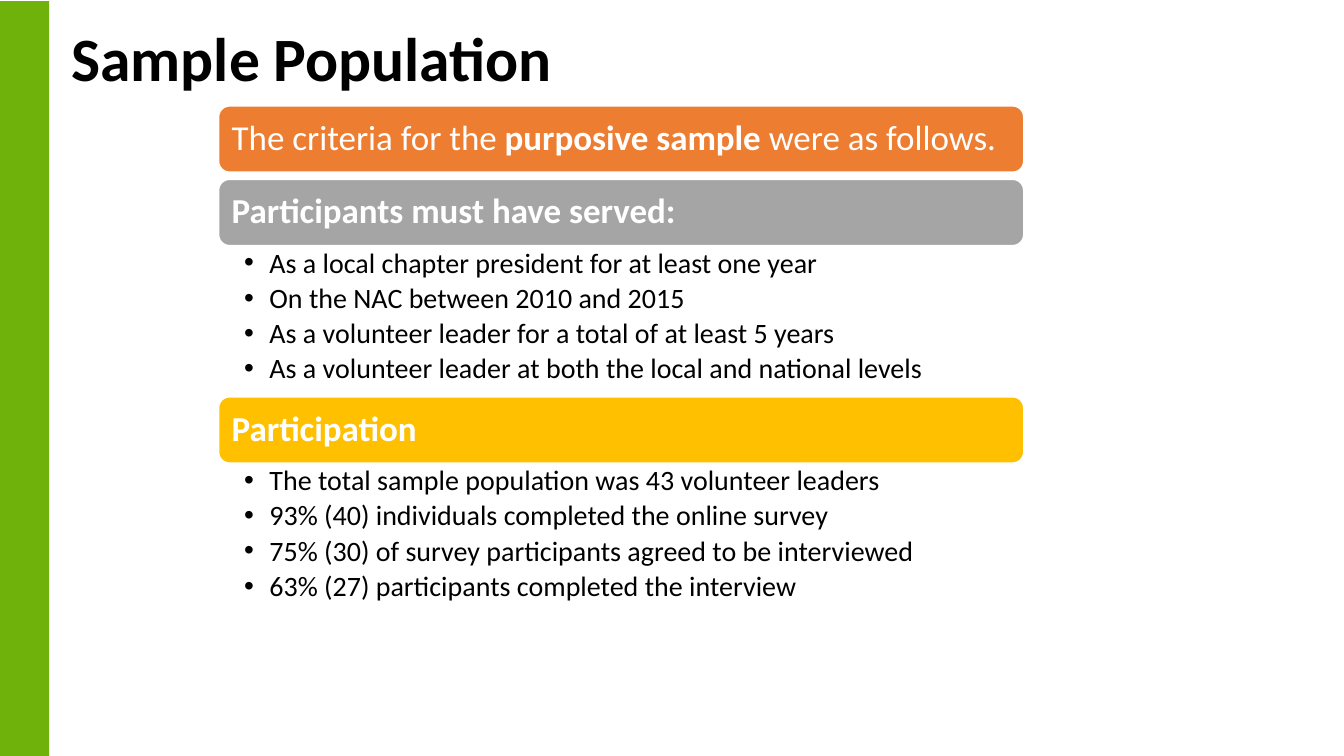
from dataclasses import dataclass

import lxml.etree
import pptx
import pptx.dml.color
import pptx.enum.shapes
import pptx.enum.text
import pptx.oxml.ns
import pptx.presentation
import pptx.shapes.autoshape
import pptx.shapes.base
import pptx.slide
import pptx.text.text
import pptx.util

COLOURS = {
    "bar": "6FB20C",
    "criteria": "ED7D31",
    "service": "A5A5A5",
    "participation": "FFC000",
    "light": "FFFFFF",
    "dark": "000000",
}
FONT_NAME = "Calibri"
STACK_LEFT, STACK_TOP, STACK_WIDTH = 5.51, 2.67, 20.29
BANNER_HEIGHT, BANNER_GAP, LIST_HEIGHT = 1.67, 0.18, 3.81
TWO_CONTENT_LAYOUT = 3


@dataclass(frozen=True)
class TextPart:
    text: str
    bold: bool = False


@dataclass(frozen=True)
class Section:
    colour: str
    heading: tuple[TextPart, ...]
    items: tuple[str, ...] = ()


SECTIONS = (
    Section("criteria", (
        TextPart("The criteria for the "),
        TextPart("purposive sample ", True),
        TextPart("were as follows."),
    )),
    Section("service", (TextPart("Participants must have served:", True),), (
        "As a local chapter president for at least one year",
        "On the NAC between 2010 and 2015",
        "As a volunteer leader for a total of at least 5 years",
        "As a volunteer leader at both the local and national levels",
    )),
    Section("participation", (TextPart("Participation", True),), (
        "The total sample population was 43 volunteer leaders",
        "93% (40) individuals completed the online survey",
        "75% (30) of survey participants agreed to be interviewed",
        "63% (27) participants completed the interview",
    )),
)


def set_attributes(target: object, values: dict[str, object]) -> None:
    for name, value in values.items():
        setattr(target, name, value)


def rgb(colour: str) -> pptx.dml.color.RGBColor:
    return pptx.dml.color.RGBColor.from_string(COLOURS[colour])


def place(shape: pptx.shapes.base.BaseShape, left: float, top: float,
          width: float, height: float) -> None:
    bounds = {"left": left, "top": top, "width": width, "height": height}
    set_attributes(shape, {name: pptx.util.Cm(value) for name, value in bounds.items()})


def format_frame(frame: pptx.text.text.TextFrame, left: float, right: float,
                 vertical: float, anchor: pptx.enum.text.MSO_ANCHOR) -> None:
    set_attributes(frame, {
        "margin_left": pptx.util.Cm(left), "margin_right": pptx.util.Cm(right),
        "margin_top": pptx.util.Cm(vertical), "margin_bottom": pptx.util.Cm(vertical),
        "vertical_anchor": anchor, "word_wrap": True,
        "auto_size": pptx.enum.text.MSO_AUTO_SIZE.NONE,
    })


def write_paragraph(paragraph: pptx.text.text._Paragraph, parts: tuple[TextPart, ...],
                    size: int, colour: str, space_after: float = 0) -> None:
    set_attributes(paragraph, {
        "alignment": pptx.enum.text.PP_ALIGN.LEFT, "line_spacing": 0.9,
        "space_before": pptx.util.Pt(0), "space_after": pptx.util.Pt(space_after),
    })
    for part in parts:
        run = paragraph.add_run()
        run.text = part.text
        set_attributes(run.font, {"name": FONT_NAME, "size": pptx.util.Pt(size),
                                  "bold": part.bold})
        run.font.color.rgb = rgb(colour)


def add_filled_shape(slide: pptx.slide.Slide, kind: pptx.enum.shapes.MSO_SHAPE,
                     colour: str, bounds: tuple[float, float, float, float],
                     ) -> pptx.shapes.autoshape.Shape:
    shape = slide.shapes.add_shape(kind, *map(pptx.util.Cm, bounds))
    shape.shadow.inherit = False
    shape.fill.solid()
    shape.fill.fore_color.rgb = rgb(colour)
    return shape


def add_banner(slide: pptx.slide.Slide, section: Section, top: float) -> None:
    banner = add_filled_shape(slide, pptx.enum.shapes.MSO_SHAPE.ROUNDED_RECTANGLE,
                              section.colour, (STACK_LEFT, top, STACK_WIDTH, BANNER_HEIGHT))
    banner.line.color.rgb = rgb("light")
    banner.line.width = pptx.util.Pt(1)
    format_frame(banner.text_frame, 0.25, 0.25, 0.25, pptx.enum.text.MSO_ANCHOR.MIDDLE)
    write_paragraph(banner.text_frame.paragraphs[0], section.heading, 25, "light")


def fill_list(body: pptx.shapes.autoshape.Shape, items: tuple[str, ...], top: float) -> None:
    place(body, STACK_LEFT, top, STACK_WIDTH, LIST_HEIGHT)
    frame = body.text_frame
    format_frame(frame, 0.64, 0.48, 0.08, pptx.enum.text.MSO_ANCHOR.TOP)
    indent = pptx.util.Cm(0.64)
    for index, item in enumerate(items):
        paragraph = frame.add_paragraph() if index else frame.paragraphs[0]
        paragraph.level = 1
        properties = paragraph._p.get_or_add_pPr()
        properties.set("marL", str(int(indent)))
        properties.set("indent", str(-int(indent)))
        bullet = lxml.etree.SubElement(properties, pptx.oxml.ns.qn("a:buChar"))
        bullet.set("char", "•")
        write_paragraph(paragraph, (TextPart(item),), 20, "dark", 3.6)


def fill_title(title: pptx.shapes.autoshape.Shape) -> None:
    place(title, 1.55, -0.05, 14.88, 3.2)
    format_frame(title.text_frame, 0.25, 0.25, 0.13, pptx.enum.text.MSO_ANCHOR.MIDDLE)
    write_paragraph(title.text_frame.paragraphs[0],
                    (TextPart("Sample Population", True),), 44, "dark")


def main() -> None:
    presentation: pptx.presentation.Presentation = pptx.Presentation()
    set_attributes(presentation, {"slide_width": pptx.util.Cm(33.87),
                                  "slide_height": pptx.util.Cm(19.05)})
    slide = presentation.slides.add_slide(presentation.slide_layouts[TWO_CONTENT_LAYOUT])
    title, *bodies = slide.placeholders
    fill_title(title)
    bar = add_filled_shape(slide, pptx.enum.shapes.MSO_SHAPE.RECTANGLE, "bar",
                           (0, 0.03, 1.24, 19.02))
    bar.line.fill.background()

    remaining_bodies = iter(bodies)
    top = STACK_TOP
    for section in SECTIONS:
        add_banner(slide, section, top)
        top += BANNER_HEIGHT
        if section.items:
            fill_list(next(remaining_bodies), section.items, top)
            top += LIST_HEIGHT
        else:
            top += BANNER_GAP
    presentation.save("out.pptx")


if __name__ == "__main__":
    main()
